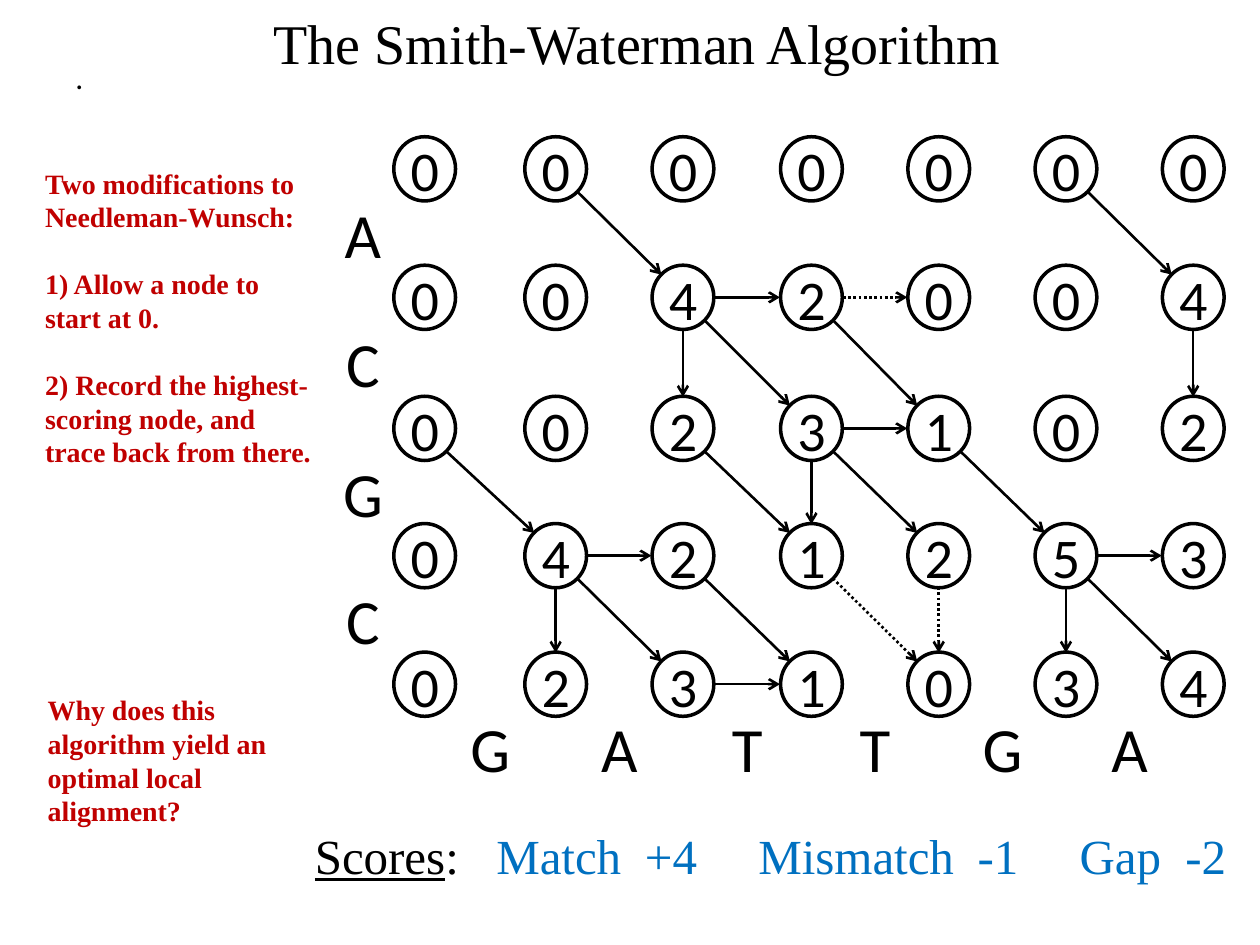
"""Build the Smith-Waterman slide: scoring grid, trace arrows and notes."""
from lxml import etree
from pptx import Presentation, util as u
from pptx.dml.color import RGBColor
from pptx.enum import dml, shapes, text
from pptx.oxml import ns

deck = Presentation()
deck.slide_width, deck.slide_height = u.Inches(10), u.Inches(7.5)
slide = deck.slides.add_slide(deck.slide_layouts[6])
UNIT = deck.slide_width / 100
SERIF, SANS = "Times New Roman", "Calibri"
BLACK, RED, BLUE = "000000", "C00000", "0070C0"
CENTER, LEFT = text.PP_ALIGN.CENTER, text.PP_ALIGN.LEFT


def units(*lengths):
    return [round(length * UNIT) for length in lengths]


def write(box, font, size, paragraphs, color=BLACK, align=LEFT, bold=False, gap=0):
    frame = slide.shapes.add_textbox(*units(*box)).text_frame
    frame.word_wrap = True
    for i, runs in enumerate(paragraphs):
        paragraph = frame.add_paragraph() if i else frame.paragraphs[0]
        paragraph.alignment = align
        paragraph.space_before = u.Pt(gap if i else 0)
        for words, run_color, underline in runs:
            run = paragraph.add_run()
            run.text = words
            run.font.name, run.font.size = font, u.Pt(size)
            run.font.bold, run.font.underline = bold, underline
            run.font.color.rgb = RGBColor.from_string(run_color or color)
    return frame


columns = [33.7, 44.1, 54.2, 64.4, 74.5, 84.6, 94.7]
rows = [13.4, 23.6, 34, 44.1, 54.3]
scores = ["0000000", "0042004", "0023102", "0421253", "0231034"]
node_w, node_h = 4.9, 5.1

write((5.6, 0.2, 90, 6.7), SERIF, 32, [[("The Smith-Waterman Algorithm", None, False)]], align=CENTER)
legend = write((24, 65, 75.2, 5.7), SERIF, 28, [[
    ("Scores", None, True), (":", None, False),
    ("\tMatch\t+4\tMismatch\t-1\tGap\t-2", BLUE, False)]])
tabs = etree.SubElement(legend.paragraphs[0]._p.get_or_add_pPr(), ns.qn("a:tabLst"))
for stop in units(14.4, 26.2, 35.2, 52.6, 60.7, 69.1):
    etree.SubElement(tabs, ns.qn("a:tab"), pos=str(stop), algn="l")

for y in rows:
    for x in columns:
        node = slide.shapes.add_shape(
            shapes.MSO_SHAPE.OVAL, *units(x - node_w / 2, y - node_h / 2, node_w, node_h))
        node.shadow.inherit = False
        node.fill.solid()
        node.fill.fore_color.rgb = RGBColor.from_string("FFFFFF")
        node.line.color.rgb = RGBColor.from_string(BLACK)
        node.line.width = u.Pt(2)

steps = {"right": (0, 1, 0, 2.5), "down": (1, 0, 2.5, 0), "diagonal": (1, 1, 1.8, 1.7)}
solid = {
    "right": [(1, 2), (2, 3), (3, 1), (3, 5), (4, 2)],
    "down": [(1, 2), (1, 6), (2, 3), (3, 1), (3, 5)],
    "diagonal": [(0, 1), (0, 5), (1, 2), (1, 3), (2, 0), (2, 2), (2, 3), (2, 4),
                 (3, 1), (3, 2), (3, 5)],
}
dotted = {"right": [(1, 3)], "down": [(3, 4)], "diagonal": [(3, 3)]}
for moves in (solid, dotted):
    for move, starts in moves.items():
        down, right, dy, dx = steps[move]
        for r, c in starts:
            arrow = slide.shapes.add_connector(shapes.MSO_CONNECTOR.STRAIGHT, *units(
                columns[c] + dx, rows[r] + dy,
                columns[c + right] - dx, rows[r + down] - dy))
            arrow.line.color.rgb = RGBColor.from_string(BLACK)
            arrow.line.width = u.Pt(1.5)
            if moves is dotted:
                arrow.line.dash_style = dml.MSO_LINE.ROUND_DOT
            etree.SubElement(arrow.line._get_or_add_ln(), ns.qn("a:tailEnd"), type="arrow")
            etree.SubElement(arrow._element.spPr, ns.qn("a:effectLst"))

for y, row_scores in zip(rows, scores):
    for x, score in zip(columns, row_scores):
        write((x - 2.1, y - 3.1, 4.2, 6.3), SANS, 32, [[(score, None, False)]], align=CENTER)

across = [((a + b) / 2, 59.3, base) for a, b, base in zip(columns, columns[1:], "GATTGA")]
along = [(28.8, (a + b) / 2, base) for a, b, base in zip(rows, rows[1:], "ACGC")]
for x, y, base in across + along:
    write((x - 2.55, y - 3.5, 5.1, 7), SANS, 36, [[(base, None, False)]], align=CENTER)

write((5, 4.1, 2.7, 4), SANS, 18, [[(".", None, False)]])
changes = ["Two modifications to Needleman-Wunsch:", "1) Allow a node to start at 0.",
           "2) Record the highest-scoring node, and trace back from there."]
question = ["Why does this algorithm yield an optimal local alignment?"]
for box, notes in (((2.6, 12.7, 23.4, 25.2), changes), ((2.8, 54.5, 24.7, 11.8), question)):
    write(box, SERIF, 16, [[(note, None, False)] for note in notes], RED, bold=True, gap=19.2)

deck.save("out.pptx")
